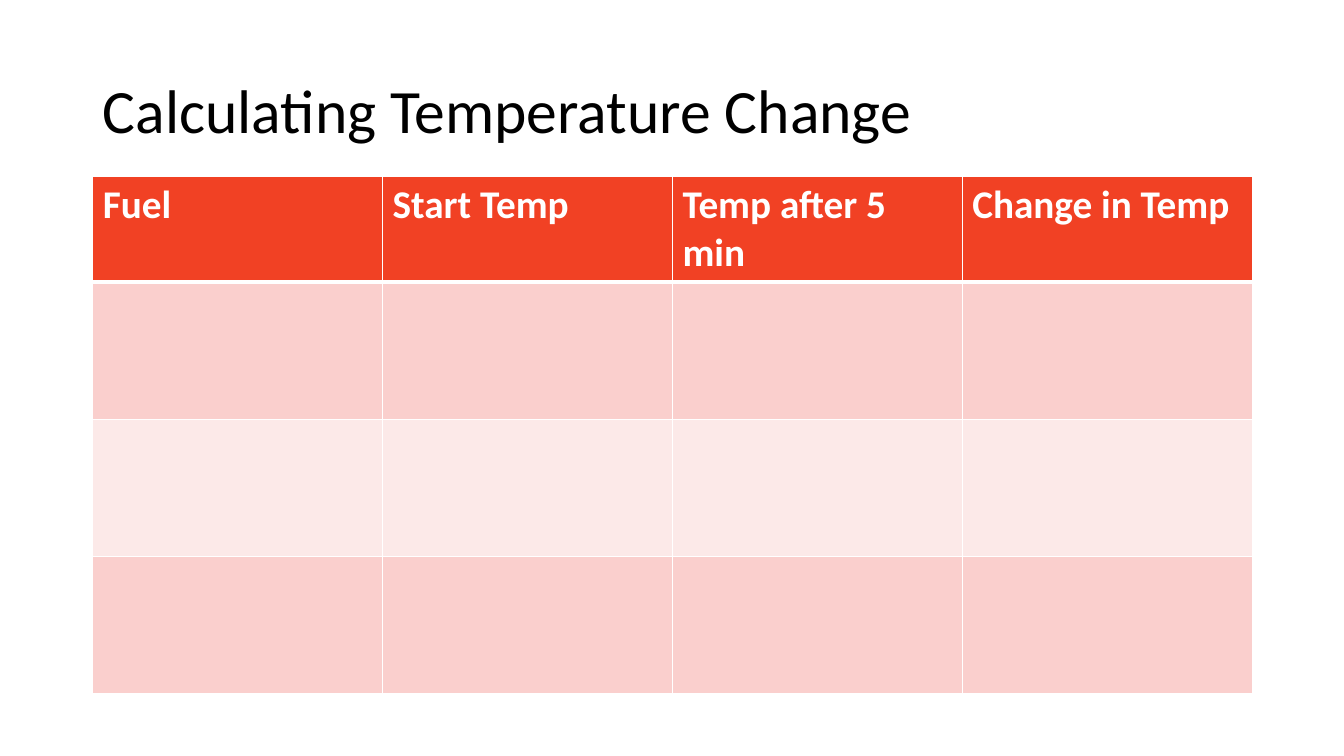
from dataclasses import dataclass

from lxml.etree import SubElement
from pptx import Presentation
from pptx.dml.color import RGBColor as Color
from pptx.enum.text import MSO_ANCHOR as Anchor, MSO_AUTO_SIZE as AutoSize, PP_ALIGN as Align
from pptx.oxml.ns import qn
from pptx.util import Inches, Pt


@dataclass(frozen=True)
class Theme:
    font: str = "Calibri"
    title_size: int = 44
    header_size: int = 28
    ink: str = "000000"
    white: str = "FFFFFF"
    header_fill: str = "F14124"
    bands: tuple = ("FACFCD", "FCE9E8")
    thin: int = 1
    thick: int = 3


THEME = Theme()
HEADERS = ("Fuel", "Start Temp", "Temp after 5 min", "Change in Temp")
BLANK_ROWS = 3
HEADER_HEIGHT, ROW_HEIGHT = 0.75, 1.36


def add_span(para, text, size, color, bold=False):
    span = para.add_run()
    span.text = text
    span.font.name = THEME.font
    span.font.size = Pt(size)
    span.font.bold = bold
    span.font.color.rgb = Color.from_string(color)


def set_borders(cell, top, bottom):
    """Draw white rules around a cell; top and bottom are widths in points."""
    props = cell._tc.get_or_add_tcPr()
    widths = {"lnL": THEME.thin, "lnR": THEME.thin, "lnT": top, "lnB": bottom}
    for side, width in widths.items():
        line = SubElement(props, qn(f"a:{side}"), w=str(Pt(width)))
        SubElement(SubElement(line, qn("a:solidFill")), qn("a:srgbClr"), val=THEME.white)


def build_title(page, left, top, width, height):
    title = page.shapes.title
    title.left, title.top = Inches(left), Inches(top)
    title.width, title.height = Inches(width), Inches(height)
    frame = title.text_frame
    frame.word_wrap = True
    frame.auto_size = AutoSize.NONE
    frame.vertical_anchor = Anchor.MIDDLE
    para = frame.paragraphs[0]
    para.alignment = Align.LEFT
    para.line_spacing = 0.9
    add_span(para, "Calculating Temperature Change", THEME.title_size, THEME.ink)


def build_table(page, left, top, width):
    height = HEADER_HEIGHT + BLANK_ROWS * ROW_HEIGHT
    table = page.shapes.add_table(
        BLANK_ROWS + 1, len(HEADERS),
        Inches(left), Inches(top), Inches(width), Inches(height)).table
    for column in table.columns:
        column.width = Inches(width / len(HEADERS))

    for index, row in enumerate(table.rows):
        is_header = index == 0
        row.height = Inches(HEADER_HEIGHT if is_header else ROW_HEIGHT)
        fill = THEME.header_fill if is_header else THEME.bands[(index - 1) % 2]
        # A thick rule parts the header from the first blank row
        rule_above = THEME.thick if index == 1 else THEME.thin
        rule_below = THEME.thick if is_header else THEME.thin
        for cell in row.cells:
            set_borders(cell, rule_above, rule_below)
            cell.fill.solid()
            cell.fill.fore_color.rgb = Color.from_string(fill)

    # Header labels
    for cell, label in zip(table.rows[0].cells, HEADERS):
        add_span(cell.text_frame.paragraphs[0], label,
                 THEME.header_size, THEME.white, bold=True)


def main():
    deck = Presentation()
    deck.slide_width, deck.slide_height = Inches(13.33), Inches(7.5)
    page = deck.slides.add_slide(deck.slide_layouts[5])
    build_title(page, 0.92, 0.4, 11.5, 1.45)
    build_table(page, 0.92, 1.75, 11.5)
    deck.save("out.pptx")


if __name__ == "__main__":
    main()
